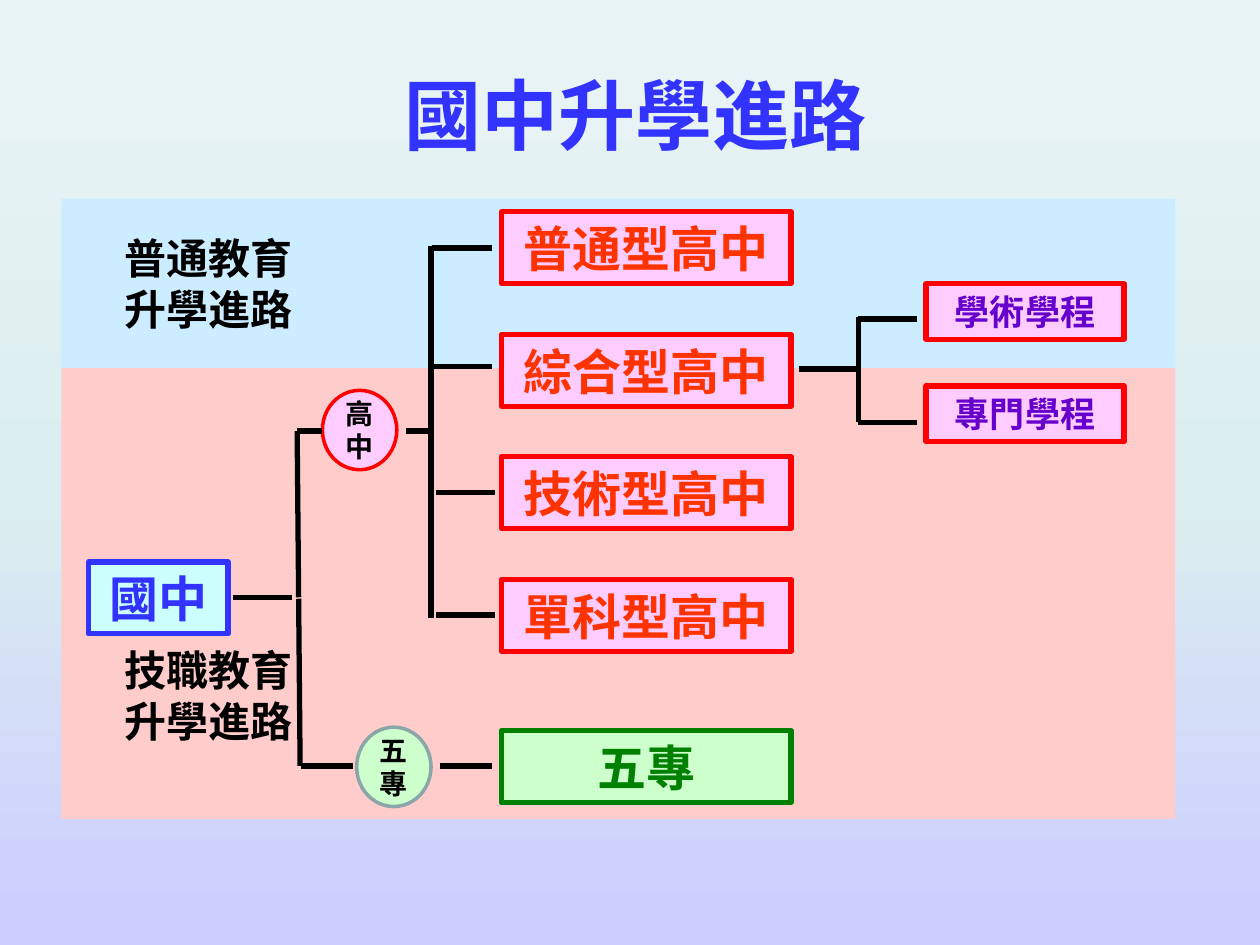
from copy import deepcopy
from pptx import Presentation
from pptx.dml.color import RGBColor
from pptx.enum.shapes import MSO_CONNECTOR as Connector, MSO_SHAPE as Shape
from pptx.enum.text import MSO_ANCHOR as Anchor, MSO_AUTO_SIZE as AutoSize, PP_ALIGN as Align
from pptx.oxml.ns import qn
from pptx.oxml.xmlchemy import OxmlElement
from pptx.util import Cm, Pt

COLORS = {
    "black": "000000", "blue": "3333FF", "red": "FF0000", "orange": "FF3300",
    "purple": "6600CC", "green": "008000", "gray": "8AA6A8", "cyan": "CCFFFF",
    "pink": "FFCCFF", "mint": "CCFFCC", "general": "CCECFF", "vocational": "FFCCCC",
    "bottom": "CCCCFF", "middle": "DBEEEF", "top": "E9F4F5",
}
CJK = "Noto Sans CJK TC"


def color(name):
    return RGBColor.from_string(COLORS[name])


class PathwaySlide:
    def __init__(self, deck):
        self.page = deck.slides.add_slide(deck.slide_layouts[5])

    def background(self, stops):
        fill = self.page.background.fill
        fill.gradient()
        fill.gradient_angle = 90
        stop_list = self.page.element.find(".//" + qn("a:gsLst"))
        while len(stop_list) < len(stops):
            stop_list.append(deepcopy(stop_list[0]))
        for stop, (position, name) in zip(fill.gradient_stops, stops):
            stop.position = position
            stop.color.rgb = color(name)

    def set_text(self, shape, lines, size, ink, font=CJK, align=Align.CENTER, inset=0):
        frame = shape.text_frame
        frame.word_wrap = True
        frame.auto_size = AutoSize.NONE
        frame.vertical_anchor = Anchor.MIDDLE
        frame.margin_left = frame.margin_right = Cm(inset)
        frame.margin_top = frame.margin_bottom = 0
        frame.text = "\n".join(lines)
        for para in frame.paragraphs:
            para.alignment = align
            para.line_spacing = Pt(round(size * 1.2))
            para.font.name = font
            para.font.size = Pt(size)
            para.font.bold = True
            para.font.color.rgb = color(ink)
            for span in para.runs:
                east_asian = OxmlElement("a:ea")
                east_asian.set("typeface", CJK)
                span.font._element.append(east_asian)

    def title(self, text, left, top, width, height):
        holder = self.page.shapes.title
        holder.left, holder.top = Cm(left), Cm(top)
        holder.width, holder.height = Cm(width), Cm(height)
        self.set_text(holder, [text], 44, "blue", "Times New Roman")

    def box(self, left, top, width, height, fill, edge=None, weight=3, kind=Shape.RECTANGLE):
        shape = self.page.shapes.add_shape(kind, Cm(left), Cm(top), Cm(width), Cm(height))
        shape.shadow.inherit = False
        shape.fill.solid()
        shape.fill.fore_color.rgb = color(fill)
        if edge:
            shape.line.color.rgb = color(edge)
            shape.line.width = Pt(weight)
        else:
            shape.line.fill.background()
        return shape

    def node(self, text, left, top, width, height, fill, edge, ink, size=28):
        self.set_text(self.box(left, top, width, height, fill, edge), [text], size, ink)

    def circle(self, text, left, top, fill, edge):
        shape = self.box(left, top, 1.5, 1.6, fill, edge, 2, Shape.OVAL)
        self.set_text(shape, [text], 16, "black", "Arial")

    def label(self, lines, left, top):
        shape = self.page.shapes.add_textbox(Cm(left), Cm(top), Cm(3.94), Cm(2.31))
        self.set_text(shape, lines, 24, "black", align=Align.LEFT, inset=0.25)

    def line(self, x1, y1, x2, y2):
        link = self.page.shapes.add_connector(
            Connector.STRAIGHT, Cm(x1), Cm(y1), Cm(x2), Cm(y2))
        link.line.color.rgb = color("black")
        link.line.width = Pt(3)
        link._element.spPr.append(OxmlElement("a:effectLst"))


def main():
    deck = Presentation()
    deck.slide_width, deck.slide_height = Cm(25.4), Cm(19.05)
    slide = PathwaySlide(deck)
    slide.background([(0, "bottom"), (0.48, "middle"), (1, "top")])
    slide.title("國中升學進路", 1.42, 1.22, 22.81, 2.13)

    slide.box(1.24, 7.42, 22.45, 9.09, "vocational")
    slide.box(1.24, 4.01, 22.45, 3.41, "general")

    slide.node("國中", 1.78, 11.33, 2.82, 1.45, "cyan", "blue", "blue")
    slide.circle("高中", 6.5, 7.87, "pink", "red")
    slide.circle("五專", 7.19, 14.66, "mint", "gray")
    slide.node("五專", 10.11, 14.73, 5.84, 1.45, "mint", "green", "green")
    for row, text in enumerate(["普通型高中", "綜合型高中", "技術型高中", "單科型高中"]):
        slide.node(text, 10.11, 4.27 + 2.47 * row, 5.84, 1.45, "pink", "red", "orange")
    for row, text in enumerate(["學術學程", "專門學程"]):
        slide.node(text, 18.67, 5.72 + 2.06 * row, 3.99, 1.12, "pink", "red", "purple", 20)

    school_links = [
        (4.7, 12.04, 5.89, 12.04), (5.99, 8.69, 6.02, 12.04), (5.99, 8.69, 6.5, 8.69),
        (6.02, 12.07, 6.05, 15.44), (6.07, 15.44, 7.11, 15.44), (8.86, 15.44, 9.91, 15.44),
    ]
    type_links = [
        (8.18, 8.69, 8.69, 8.69), (8.69, 4.95, 8.69, 12.45),
        (8.71, 5, 9.91, 5), (8.71, 7.39, 9.91, 7.39),
        (8.79, 9.93, 9.98, 9.93), (8.79, 12.4, 9.98, 12.4),
    ]
    program_links = [
        (16.1, 7.44, 17.3, 7.44), (17.3, 6.4, 17.3, 8.51),
        (17.3, 6.43, 18.49, 6.43), (17.3, 8.51, 18.49, 8.51),
    ]
    for ends in school_links + type_links + program_links:
        slide.line(*ends)

    slide.label(["普通教育", "升學進路"], 2.26, 4.55)
    slide.label(["技職教育", "升學進路"], 2.26, 12.85)
    deck.save("out.pptx")


if __name__ == "__main__":
    main()
